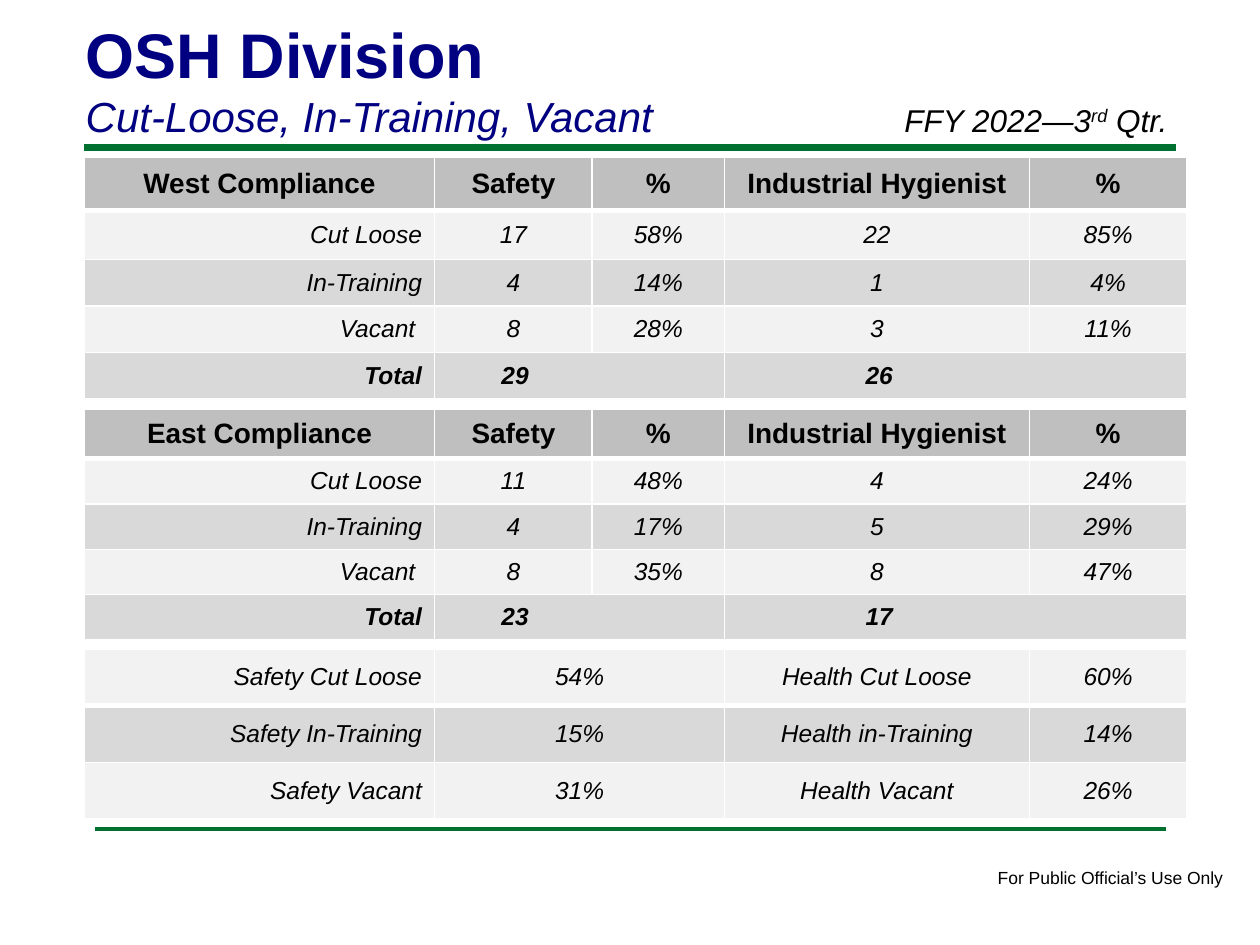
from lxml import etree
from pptx import Presentation
from pptx.dml.color import RGBColor
from pptx.enum.shapes import MSO_CONNECTOR as Conn
from pptx.enum.text import MSO_ANCHOR as Anchor, MSO_AUTO_SIZE as Fit, PP_ALIGN as Align
from pptx.oxml.ns import qn
from pptx.util import Inches, Pt

NAVY = RGBColor(0x00, 0x00, 0x80)
GREEN = RGBColor(0x00, 0x70, 0x30)
BLACK = RGBColor(0x00, 0x00, 0x00)
HEAD = RGBColor(0xBF, 0xBF, 0xBF)
DARK = RGBColor(0xD9, 0xD9, 0xD9)
PALE = RGBColor(0xF2, 0xF2, 0xF2)
WHITE = "FFFFFF"

LEFT = 0.67
NAME, COUNT, SHARE, HEALTH = 2.78, 1.25, 1.05, 2.42
# Left indents that place the totals inside their merged cells
INDENTS = {1: 0.53, 3: 1.12}


class Deck:
    font = "Arial"

    def __init__(self):
        self.file = Presentation()
        self.file.slide_width = Inches(10)
        self.file.slide_height = Inches(7.5)
        self.slide = self.file.slides.add_slide(self.file.slide_layouts[5])

    def run(self, para, text, size, color=BLACK, bold=False, italic=False, base=0):
        run = para.add_run()
        run.text = text
        font = run.font
        font.name, font.size = self.font, Pt(size)
        font.bold, font.italic = bold, italic
        font.color.rgb = color
        if base:
            run._r.get_or_add_rPr().set("baseline", str(base * 1000))

    def place(self, shape, left, top, width, height):
        shape.left, shape.top = Inches(left), Inches(top)
        shape.width, shape.height = Inches(width), Inches(height)

    def title(self, head, sub, *box):
        shape = self.slide.shapes.title
        self.place(shape, *box)
        frame = shape.text_frame
        frame.auto_size = Fit.NONE
        frame.vertical_anchor = Anchor.BOTTOM
        first, second = frame.paragraphs[0], frame.add_paragraph()
        first.alignment = second.alignment = Align.LEFT
        self.run(first, head, 36, NAVY, bold=True)
        self.run(second, sub, 24, NAVY, italic=True)

    def text(self, parts, size, *box, italic=False, wrap=True):
        shape = self.slide.shapes.add_textbox(*map(Inches, box))
        frame = shape.text_frame
        frame.word_wrap = wrap
        for text, base in parts:
            self.run(frame.paragraphs[0], text, size, italic=italic, base=base)

    def rule(self, left, right, top, weight):
        line = self.slide.shapes.add_connector(
            Conn.STRAIGHT, Inches(left), Inches(top), Inches(right), Inches(top))
        line.line.color.rgb = GREEN
        line.line.width = Pt(weight)
        etree.SubElement(line._element.spPr, qn("a:effectLst"))

    def edges(self, cell, top, bottom):
        props = cell._tc.get_or_add_tcPr()
        for side, weight in zip("LRTB", (1, 1, top, bottom)):
            edge = etree.SubElement(props, qn(f"a:ln{side}"), w=str(Pt(weight)))
            fill = etree.SubElement(edge, qn("a:solidFill"))
            etree.SubElement(fill, qn("a:srgbClr"), val=WHITE)

    def cell(self, cell, text, fill, align, **style):
        cell.fill.solid()
        cell.fill.fore_color.rgb = fill
        cell.vertical_anchor = Anchor.MIDDLE
        cell.margin_top = cell.margin_bottom = 0
        para = cell.text_frame.paragraphs[0]
        para.alignment = align
        if text:
            self.run(para, text, **style)

    def table(self, top, widths, heights, rows, staff=True):
        shape = self.slide.shapes.add_table(
            len(rows), len(widths), Inches(LEFT), Inches(top),
            Inches(sum(widths)), Inches(sum(heights)))
        grid = shape.table
        grid.first_row = grid.horz_banding = False
        for col, width in zip(grid.columns, widths):
            col.width = Inches(width)
        for r, (height, row) in enumerate(zip(heights, rows)):
            grid.rows[r].height = Inches(height)
            header = staff and r == 0
            total = staff and r == len(rows) - 1
            # Bands alternate below the header, or from the first row
            fill = HEAD if header else (PALE, DARK)[(r - staff) % 2]
            for c, text in enumerate(row):
                cell = grid.cell(r, c)
                self.edges(cell, 3 if r == 1 else 1, 3 if r == 0 else 1)
                align = Align.RIGHT if c == 0 and not header else Align.CENTER
                if total and c in INDENTS:
                    cell.merge(grid.cell(r, c + 1))
                    cell.margin_left = Inches(INDENTS[c])
                    align = Align.LEFT
                self.cell(cell, text, fill, align, size=16 if header else 14,
                          bold=header or total, italic=not header)


def main():
    deck = Deck()

    # Rules, heading and footer
    deck.rule(0.67, 9.33, 1.17, 4)
    deck.rule(0.75, 9.25, 6.58, 2)
    deck.text([("For Public Official’s Use Only", 0)], 10,
              7.82, 6.83, 2.01, 0.27, wrap=False)
    deck.title("OSH Division", "Cut-Loose, In-Training, Vacant", 0.58, 0.06, 8.25, 1.11)
    deck.text([("FFY 2022—3", 0), ("rd", 30), (" Qtr.", 0)], 18,
              7.08, 0.75, 2.5, 0.4, italic=True)

    # Staff tables by region
    widths = [NAME, COUNT, SHARE, HEALTH, COUNT]
    heads = ["Safety", "%", "Industrial Hygienist", "%"]
    deck.table(1.25, widths, [0.42, 0.39] + [0.37] * 3, [
        ["West Compliance", *heads],
        ["Cut Loose", "17", "58%", "22", "85%"],
        ["In-Training", "4", "14%", "1", "4%"],
        ["Vacant ", "8", "28%", "3", "11%"],
        ["Total", "29", "", "26", ""],
    ])
    deck.table(3.25, widths, [0.39] + [0.36] * 4, [
        ["East Compliance", *heads],
        ["Cut Loose", "11", "48%", "4", "24%"],
        ["In-Training", "4", "17%", "5", "29%"],
        ["Vacant ", "8", "35%", "8", "47%"],
        ["Total", "23", "", "17", ""],
    ])

    # Overall shares
    deck.table(5.15, [NAME, COUNT + SHARE, HEALTH, COUNT], [0.45] * 3, [
        ["Safety Cut Loose", "54%", "Health Cut Loose", "60%"],
        ["Safety In-Training", "15%", "Health in-Training", "14%"],
        ["Safety Vacant", "31%", "Health Vacant", "26%"],
    ], staff=False)

    deck.file.save("out.pptx")


if __name__ == "__main__":
    main()
